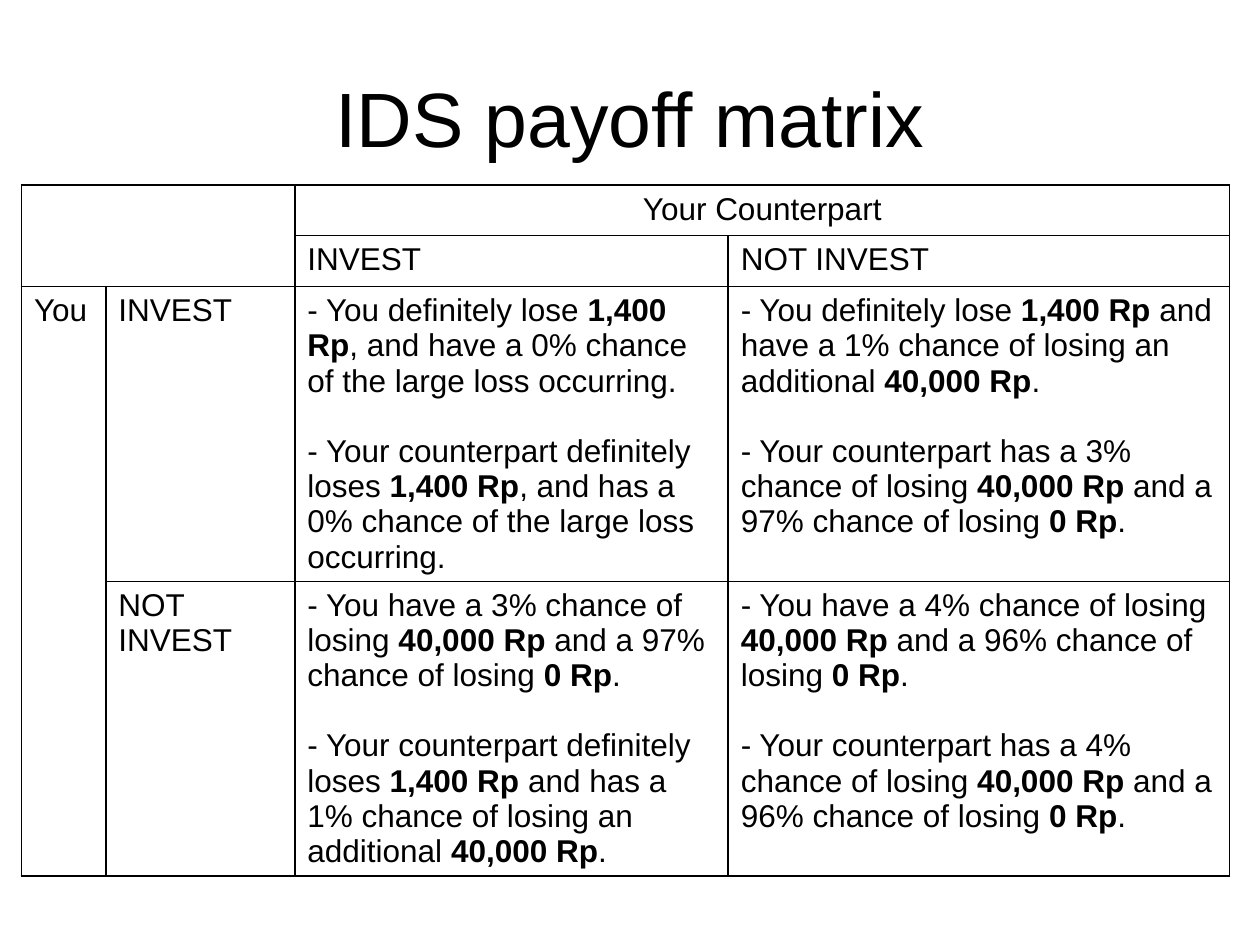
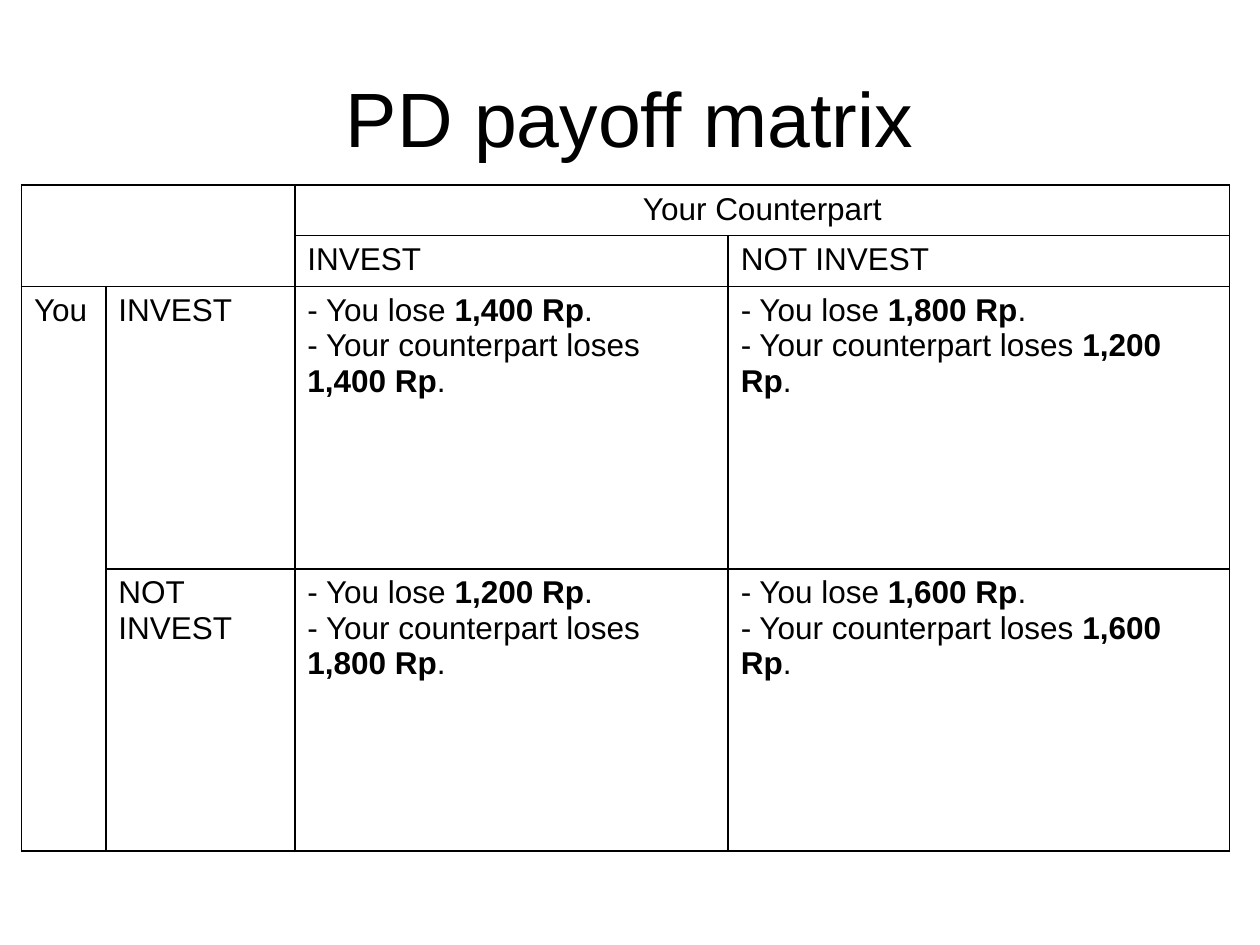
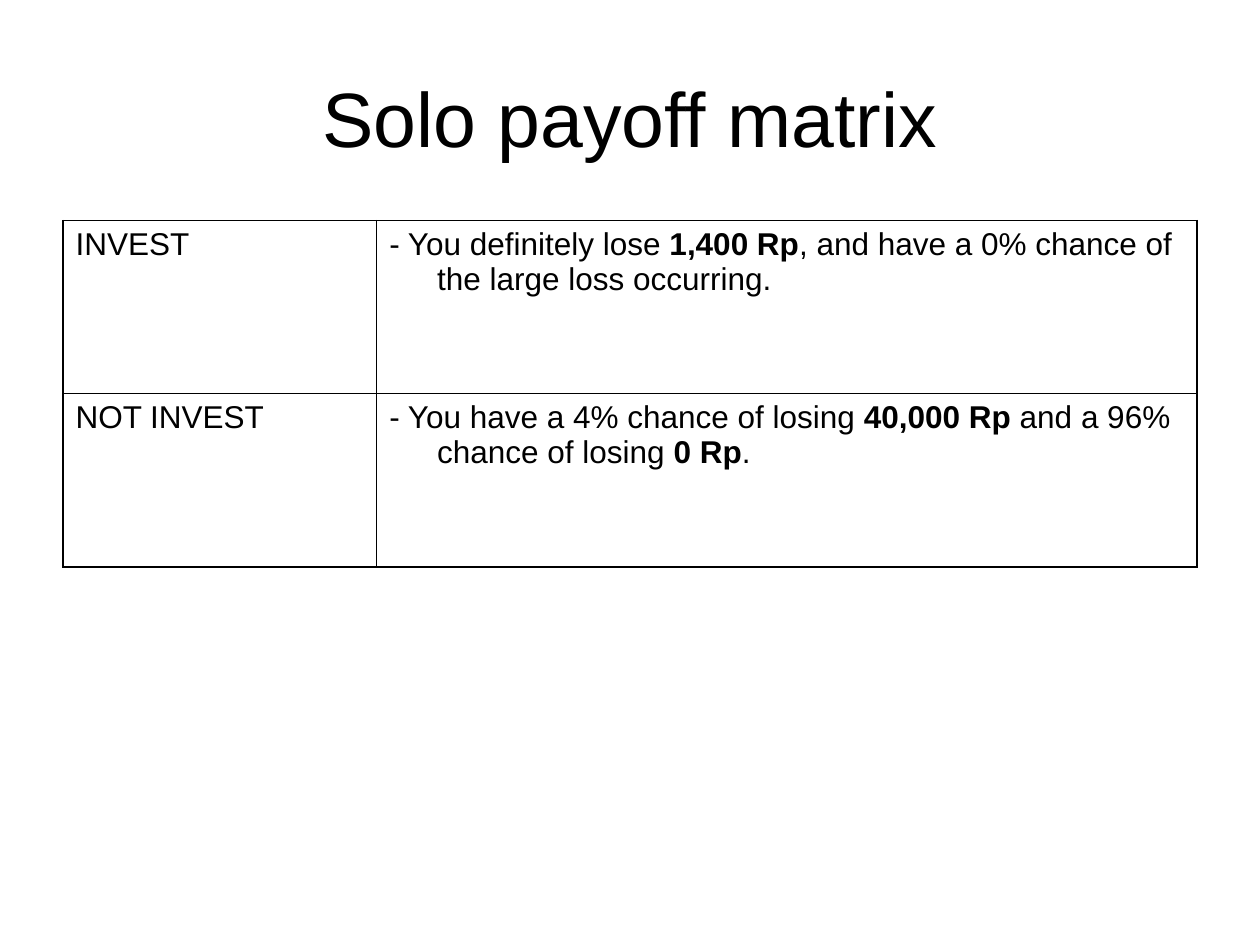
from dataclasses import dataclass
from itertools import product

from lxml import etree
from pptx import Presentation
from pptx import util as u
from pptx.dml.color import RGBColor
from pptx.enum import text
from pptx.oxml import ns


@dataclass(frozen=True)
class Theme:
    ink: RGBColor = RGBColor(0, 0, 0)
    font: str = "Arial"
    title_size: u.Pt = u.Pt(44)
    cell_size: u.Pt = u.Pt(18)
    border: u.Pt = u.Pt(1)
    hang: u.Inches = u.Inches(0.38)
    paragraph_gap: u.Pt = u.Pt(20)


@dataclass(frozen=True)
class Cell:
    """One table cell; ** marks bold and each line is a paragraph."""
    row: int
    col: int
    words: str = ""
    row_span: int = 1
    col_span: int = 1
    centred: bool = False
    hanging: bool = True
    gap: int = 0


@dataclass(frozen=True)
class Matrix:
    title: str
    left: float
    top: float
    cols: list[float]
    rows: list[float]
    cells: list[Cell]


THEME = Theme()
TITLE_ONLY = 5


# Text
def format_font(font, size: int, bold: bool = False) -> None:
    for name, value in {"name": THEME.font, "size": size, "bold": bold}.items():
        setattr(font, name, value)
    font.color.rgb = THEME.ink


def write_cell(tf, item: Cell) -> None:
    for i, line in enumerate(item.words.split("\n")):
        p = tf.add_paragraph() if i else tf.paragraphs[0]
        p.alignment = text.PP_ALIGN.CENTER if item.centred else text.PP_ALIGN.LEFT
        p.space_before = u.Pt(0) if i == 0 else item.gap
        if item.hanging:
            pPr = p._p.get_or_add_pPr()
            pPr.set("marL", str(THEME.hang))
            pPr.set("indent", str(-THEME.hang))
        for n, part in enumerate(line.split("**")):
            if part:
                r = p.add_run()
                r.text = part
                format_font(r.font, THEME.cell_size, bold=n % 2 == 1)


# Table
def add_borders(cell) -> None:
    tcPr = cell._tc.get_or_add_tcPr()
    for side in ("a:lnL", "a:lnR", "a:lnT", "a:lnB"):
        ln = etree.SubElement(tcPr, ns.qn(side), w=str(THEME.border))
        fill = etree.SubElement(ln, ns.qn("a:solidFill"))
        etree.SubElement(fill, ns.qn("a:srgbClr"), val=str(THEME.ink))


def add_table(slide, matrix: Matrix) -> None:
    cols, rows = matrix.cols, matrix.rows
    table = slide.shapes.add_table(
        len(rows), len(cols), u.Inches(matrix.left), u.Inches(matrix.top),
        u.Inches(sum(cols)), u.Inches(sum(rows))).table
    for flag in ("first_row", "horz_banding"):
        setattr(table, flag, False)
    for column, width in zip(table.columns, cols):
        column.width = u.Inches(width)
    for row, height in zip(table.rows, rows):
        row.height = u.Inches(height)
    for cell in table.iter_cells():
        add_borders(cell)
        cell.fill.background()
    for item in matrix.cells:
        cell = table.cell(item.row, item.col)
        if item.row_span > 1 or item.col_span > 1:
            cell.merge(table.cell(item.row + item.row_span - 1,
                                  item.col + item.col_span - 1))
        write_cell(cell.text_frame, item)


# Slide
def add_matrix_slide(prs, matrix: Matrix) -> None:
    slide = prs.slides.add_slide(prs.slide_layouts[TITLE_ONLY])
    sp = slide.shapes.title
    box = {"left": 0.5, "top": 0.3, "width": 9, "height": 1.25}
    for name, value in box.items():
        setattr(sp, name, u.Inches(value))
    tf = sp.text_frame
    tf.text = matrix.title
    tf.vertical_anchor = text.MSO_ANCHOR.MIDDLE
    p = tf.paragraphs[0]
    p.alignment = text.PP_ALIGN.CENTER
    format_font(p.runs[0].font, THEME.title_size)
    add_table(slide, matrix)


def two_player(title: str, payoffs: list[str], gap: int = 0) -> Matrix:
    """Both players' choices, with payoffs listed row by row."""
    headings = [
        Cell(0, 0, row_span=2, col_span=2),
        Cell(0, 2, "Your Counterpart", col_span=2, centred=True),
        Cell(1, 2, "INVEST"),
        Cell(1, 3, "NOT INVEST"),
        Cell(2, 0, "You", row_span=2),
        Cell(2, 1, "INVEST"),
        Cell(3, 1, "NOT\nINVEST"),
    ]
    outcomes = [Cell(row, col, words, hanging=False, gap=gap)
                for (row, col), words in zip(product((2, 3), (2, 3)), payoffs)]
    return Matrix(title, 0.17, 1.47, [0.67, 1.5, 3.44, 3.98],
                  [0.4, 0.4, 2.24, 2.24], headings + outcomes)


def solo(title: str, payoffs: dict[str, str]) -> Matrix:
    cells = [Cell(row, col, words) for row, pair in enumerate(payoffs.items())
             for col, words in enumerate(pair)]
    return Matrix(title, 0.5, 1.75, [2.49, 6.51], [2.75 / 2] * 2, cells)


# Content
IDS_PAYOFFS = [
    "- You definitely lose **1,400 Rp**, and have a 0% chance of the large loss occurring.\n"
    "- Your counterpart definitely loses **1,400 Rp**, and has a 0% chance of the large "
    "loss occurring.",
    "- You definitely lose **1,400 Rp** and have a 1% chance of losing an additional "
    "**40,000 Rp**.\n"
    "- Your counterpart has a 3% chance of losing **40,000 Rp** and a 97% chance of "
    "losing **0 Rp**.",
    "- You have a 3% chance of losing **40,000 Rp** and a 97% chance of losing **0 Rp**.\n"
    "- Your counterpart definitely loses **1,400 Rp** and has a 1% chance of losing an "
    "additional **40,000 Rp**.",
    "- You have a 4% chance of losing **40,000 Rp** and a 96% chance of losing **0 Rp**.\n"
    "- Your counterpart has a 4% chance of losing **40,000 Rp** and a 96% chance of "
    "losing **0 Rp**.",
]
PD_LOSSES = [("1,400", "1,400"), ("1,800", "1,200"),
             ("1,200", "1,800"), ("1,600", "1,600")]
PD_PAYOFFS = [f"- You lose **{yours} Rp**.\n- Your counterpart loses **{theirs} Rp**."
              for yours, theirs in PD_LOSSES]
SOLO_PAYOFFS = {
    "INVEST": "- You definitely lose **1,400 Rp**, and have a 0% chance of the large "
              "loss occurring.",
    "NOT INVEST": "- You have a 4% chance of losing **40,000 Rp** and a 96% chance of "
                  "losing **0 Rp**.",
}


def main() -> None:
    prs = Presentation()
    prs.slide_width, prs.slide_height = u.Inches(10), u.Inches(7.5)
    for matrix in (
        two_player("IDS payoff matrix", IDS_PAYOFFS, THEME.paragraph_gap),
        two_player("PD payoff matrix", PD_PAYOFFS),
        solo("Solo payoff matrix", SOLO_PAYOFFS),
    ):
        add_matrix_slide(prs, matrix)
    prs.save("out.pptx")


if __name__ == "__main__":
    main()
